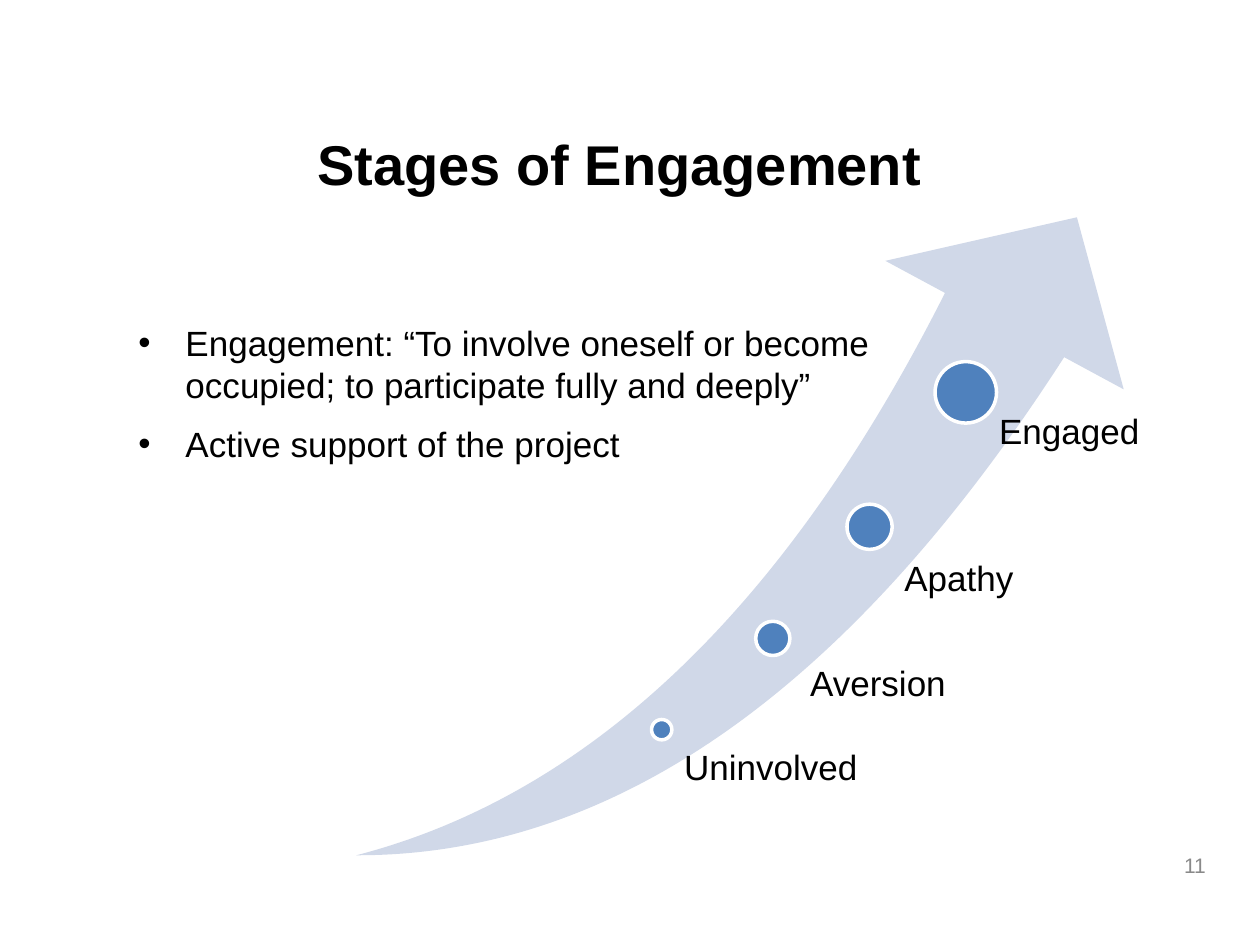
import pptx
import pptx.dml.color
import pptx.enum.shapes
import pptx.enum.text
import pptx.oxml.ns
import pptx.util
from lxml import etree

Cm, Pt = pptx.util.Cm, pptx.util.Pt
SHAPE = pptx.enum.shapes.MSO_SHAPE
ALIGN = pptx.enum.text.PP_ALIGN
ANCHOR = pptx.enum.text.MSO_ANCHOR

STAGES = [
    ("Engaged", 12.69, 2.12, 1.24, 13.11, 2.34),
    ("Apathy", 10.75, 4.83, 0.91, 11.2, 5.31),
    ("Aversion", 8.8, 7.08, 0.69, 9.3, 7.42),
    ("Uninvolved", 6.56, 8.92, 0.41, 6.76, 9.12),
]
POINTS = [
    "Engagement: “To involve oneself or become occupied; to participate fully and deeply”",
    "Active support of the project",
]


def rgb(value):
    """Return the colour for a hex string."""
    return pptx.dml.color.RGBColor.from_string(value)


def add_bullet(p, indent):
    """Give a paragraph a round bullet with a hanging indent."""
    pPr = p._p.get_or_add_pPr()
    pPr.set("marL", str(Cm(indent)))
    pPr.set("indent", str(-Cm(indent)))
    etree.SubElement(pPr, pptx.oxml.ns.qn("a:buFont")).set("typeface", "Arial")
    etree.SubElement(pPr, pptx.oxml.ns.qn("a:buChar")).set("char", "•")


def add_text(shapes, text, box, size=20, color="000000", bold=False,
             align=ALIGN.LEFT, anchor=ANCHOR.TOP, indent=0, before=0, after=0):
    """Add a text box with one paragraph for each line of text."""
    sp = shapes.add_textbox(*map(Cm, box))
    tf = sp.text_frame
    tf.word_wrap = True
    tf.vertical_anchor = anchor
    for i, line in enumerate(text.split("\n")):
        p = tf.add_paragraph() if i else tf.paragraphs[0]
        p.alignment = align
        p.space_before = Pt(before if i else 0)
        p.space_after = Pt(after)
        if indent:
            add_bullet(p, indent)
        r = p.add_run()
        r.text = line
        r.font.name = "Arial"
        r.font.size = Pt(size)
        r.font.bold = bold
        r.font.color.rgb = rgb(color)
    return sp


def add_filled(shapes, kind, box, fill, line=None):
    """Add a flat preset shape with an optional outline."""
    sp = shapes.add_shape(kind, *map(Cm, box))
    sp.shadow.inherit = False
    sp.fill.solid()
    sp.fill.fore_color.rgb = rgb(fill)
    if line:
        sp.line.color.rgb = rgb(line)
        sp.line.width = Pt(2)
    else:
        sp.line.fill.background()
    return sp


def add_title(s, box):
    """Place the slide title."""
    add_text(s.shapes, "Stages of Engagement", box, size=32, bold=True,
             align=ALIGN.CENTER, anchor=ANCHOR.MIDDLE)


def add_points(s, box):
    """Place the bulleted definition."""
    add_text(s.shapes, "\n".join(POINTS), box, indent=0.95, before=4, after=6)


def add_stages(s, box):
    """Place the rising arrow with its dots and labels."""
    left, top = box[:2]
    shapes = s.shapes.add_group_shape().shapes
    arrow = add_filled(shapes, SHAPE.SWOOSH_ARROW, box, "D0D8E8")
    arrow.adjustments[0] = arrow.adjustments[1] = 0.25
    arrow.rotation = 111.9
    arrow._element.spPr.xfrm.set("flipH", "1")
    for _, x, y, d, _, _ in STAGES:
        dot = (left + x - d / 2, top + y - d / 2, d, d)
        add_filled(shapes, SHAPE.OVAL, dot, "4F81BD", line="FFFFFF")
    for name, _, _, _, x, y in STAGES:
        add_text(shapes, name, (left + x, top + y, 5.5, 1.11))


def add_number(s, box):
    """Place the slide number."""
    add_text(s.shapes, "11", box, size=12, color="898989",
             align=ALIGN.RIGHT, anchor=ANCHOR.MIDDLE)


def main():
    """Build and save the slide."""
    prs = pptx.Presentation()
    prs.slide_width, prs.slide_height = Cm(25.4), Cm(19.05)
    s = prs.slides.add_slide(prs.slide_layouts[6])
    add_title(s, (0.85, 1.69, 23.28, 3.18))
    add_number(s, (18.63, 16.93, 5.93, 1.02))
    add_points(s, (2.54, 6.35, 15.45, 5.29))
    add_stages(s, (6.78, 5.79, 17.35, 10.85))
    prs.save("out.pptx")


if __name__ == "__main__":
    main()
